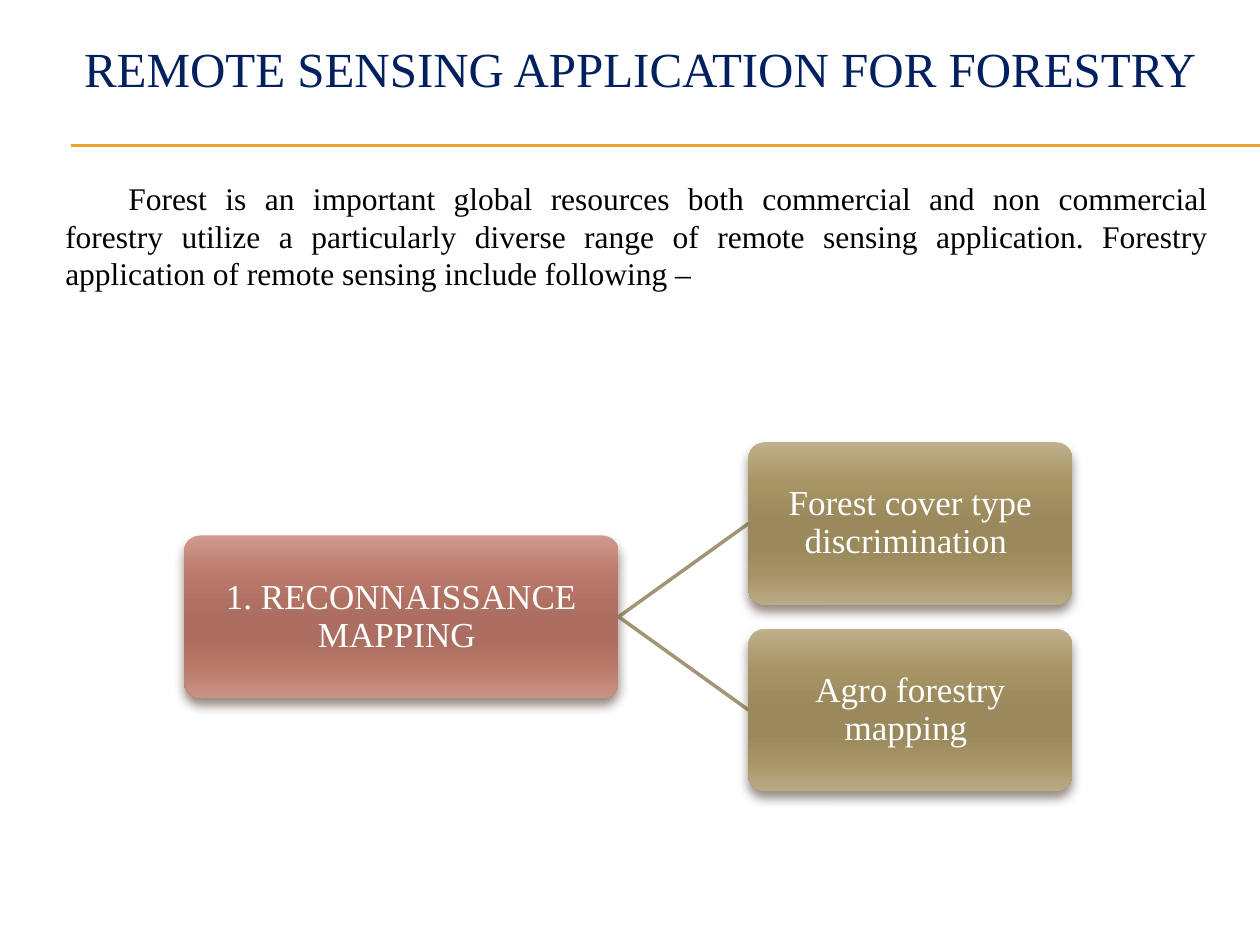
from typing import NamedTuple

from lxml.etree import SubElement
from pptx import Presentation
from pptx.dml.color import RGBColor
from pptx.enum.shapes import MSO_CONNECTOR as Link, MSO_SHAPE as Form
from pptx.enum.text import MSO_ANCHOR as Anchor, PP_ALIGN as Align
from pptx.oxml.ns import qn
from pptx.util import Inches, Pt

FONT = "Times New Roman"
GOLD, NAVY, TAN = "F0A22E", "002060", "A19574"
STOPS = (0, 25, 50, 65, 80, 100)
ROSE = ("D09A8D", "B97869", "AB6E60", "AB6E60", "B87868", "CA9386")
SAND = ("C0B18C", "A69465", "9A895C", "9A895C", "A59364", "BAAA85")
HIGH = 1.29


class Node(NamedTuple):
    text: str
    left: float
    top: float
    width: float
    shades: tuple[str, ...]

    @property
    def mid(self) -> float:
        return self.top + HIGH / 2


def color(code: str) -> RGBColor:
    return RGBColor.from_string(code)


def write(frame, text: str, size: int, code: str, align: Align):
    frame.word_wrap = True
    para = frame.paragraphs[0]
    para.alignment = align
    run = para.add_run()
    run.text = text
    run.font.name, run.font.size = FONT, Pt(size)
    run.font.color.rgb = color(code)
    return para


def add_text(slide, box: tuple[float, ...], text: str, size: int,
             code: str, align: Align) -> None:
    shape = slide.shapes.add_textbox(*map(Inches, box))
    write(shape.text_frame, text, size, code, align)


def add_line(slide, start: tuple[float, float], end: tuple[float, float],
             code: str, width: float) -> None:
    line = slide.shapes.add_connector(
        Link.STRAIGHT, *map(Inches, (*start, *end)))
    line.line.color.rgb = color(code)
    line.line.width = Pt(width)
    SubElement(line._element.spPr, qn("a:effectLst"))


def add_tint(parent, code: str):
    return SubElement(parent, qn("a:srgbClr"), val=code)


def shade(shape, shades: tuple[str, ...]) -> None:
    shape.fill.gradient()
    shape.fill.gradient_angle = 270  # top to bottom
    stops = shape._element.spPr.find(".//" + qn("a:gsLst"))
    for old in list(stops):
        stops.remove(old)
    for pos, code in zip(STOPS, shades):
        add_tint(SubElement(stops, qn("a:gs"), pos=str(pos * 1000)), code)


def add_shadow(shape) -> None:
    shape.shadow.inherit = False
    effects = shape._element.spPr.find(qn("a:effectLst"))
    glow = SubElement(effects, qn("a:outerShdw"), blurRad=str(Pt(6)),
                      dist=str(Pt(4)), dir="5400000", rotWithShape="0")
    SubElement(add_tint(glow, "4E3B30"), qn("a:alpha"), val="60000")


def add_node(slide, node: Node) -> None:
    shape = slide.shapes.add_shape(
        Form.ROUNDED_RECTANGLE,
        *map(Inches, (node.left, node.top, node.width, HIGH)))
    shape.adjustments[0] = 0.1
    shade(shape, node.shades)
    shape.line.fill.background()
    add_shadow(shape)
    frame = shape.text_frame
    frame.margin_left = frame.margin_right = Inches(0.01)
    frame.margin_top = frame.margin_bottom = Inches(0.01)
    frame.vertical_anchor = Anchor.MIDDLE
    para = write(frame, node.text, 20, "FFFFFF", Align.CENTER)
    para.line_spacing = 0.9


def main() -> None:
    deck = Presentation()
    deck.slide_width, deck.slide_height = Inches(10), Inches(7.5)
    slide = deck.slides.add_slide(deck.slide_layouts[6])

    # Double rule under the title
    for y in (1.15, 1.16):
        add_line(slide, (0.56, y), (10, y), GOLD, 0.75)

    # Title and introduction
    add_text(slide, (0.08, 0.26, 10, 0.57),
             "REMOTE SENSING APPLICATION FOR FORESTRY", 28, NAVY, Align.CENTER)
    add_text(slide, (0.42, 1.37, 9.27, 1),
             "\tForest is an important global resources both commercial and "
             "non commercial forestry utilize a particularly diverse range of "
             "remote sensing application. Forestry application of remote "
             "sensing include following –", 18, "000000", Align.JUSTIFY)

    # Tree: one root, two leaves
    root = Node("1. RECONNAISSANCE MAPPING ", 1.46, 4.25, 3.45, ROSE)
    names = ("Forest cover type discrimination ", "Agro forestry mapping ")
    leaves = [Node(name, 5.94, 3.51 + 1.48 * i, 2.57, SAND)
              for i, name in enumerate(names)]
    for leaf in leaves:
        add_line(slide, (root.left + root.width, root.mid),
                 (leaf.left, leaf.mid), TAN, 2)
    for node in (root, *leaves):
        add_node(slide, node)

    deck.save("out.pptx")


if __name__ == "__main__":
    main()
